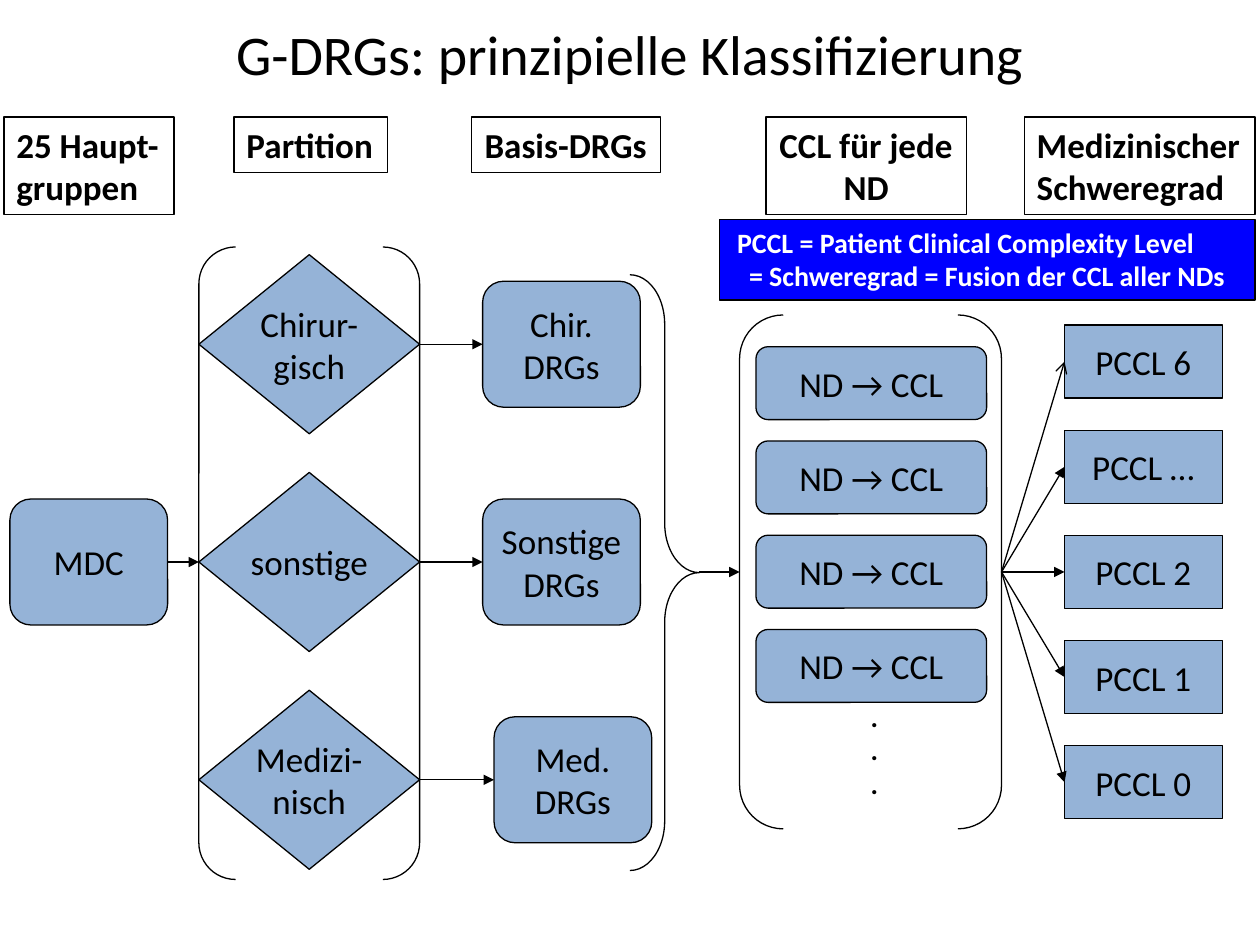
from lxml.etree import SubElement
from pptx import Presentation
from pptx.dml.color import RGBColor
from pptx.enum.shapes import MSO_CONNECTOR, MSO_SHAPE as SHAPE
from pptx.enum.text import MSO_ANCHOR as ANCHOR, PP_ALIGN as ALIGN
from pptx.oxml.ns import qn
from pptx.util import Cm, Pt

COLORS = {"box": "95B3D7", "banner": "0000FF", "ink": "000000", "light": "FFFFFF"}

TITLE = "G-DRGs: prinzipielle Klassifizierung"
HEADERS = [
    (["25 Haupt-", "gruppen"], 0.08, 3.43, ALIGN.LEFT),
    (["Partition"], 4.72, 3.1, ALIGN.LEFT),
    (["Basis-DRGs"], 9.5, 3.81, ALIGN.CENTER),
    (["CCL für jede", "ND"], 15.44, 4.04, ALIGN.CENTER),
    (["Medizinischer", "Schweregrad"], 20.65, 4.65, ALIGN.LEFT),
]
BANNER = ["PCCL = Patient Clinical Complexity Level",
          "= Schweregrad = Fusion der CCL aller NDs"]
BANNER_INDENTS = [0.11, 0.35]
PARTITIONS = [
    (["Chirur-", "gisch"], ["Chir.", "DRGs"], 9.73),
    (["sonstige"], ["Sonstige", "DRGs"], 9.73),
    (["Medizi-", "nisch"], ["Med.", "DRGs"], 9.96),
]
DIAGNOSES = ["ND → CCL"] * 4
LEVELS = ["PCCL 6", "PCCL …", "PCCL 2", "PCCL 1", "PCCL 0"]

BOX_W, BOX_H, SLIM_H = 3.18, 2.54, 1.47
MDC_X, PART_X, PART_W, PART_H = 0.2, 4.01, 4.45, 3.61
PART_MID, PART_STEP = 11.33, 4.39
ND_X, ND_Y, ND_W, ND_STEP = 15.24, 6.99, 4.65, 1.9
LEVEL_X, LEVEL_MID, LEVEL_STEP = 21.46, 11.53, 2.12
CCL_X, CCL_W, BRACE_X, BRACE_W = 14.91, 5.28, 12.7, 1.4

prs = Presentation()
prs.slide_width, prs.slide_height = Cm(25.4), Cm(19.05)
s = prs.slides.add_slide(prs.slide_layouts[5])


def color(name):
    return RGBColor.from_string(COLORS[name])


def write(tf, lines, size=20, bold=False, ink="ink", align=ALIGN.CENTER,
          anchor=ANCHOR.MIDDLE, wrap=False):
    tf.word_wrap = wrap
    tf.vertical_anchor = anchor
    for i, line in enumerate(lines):
        p = tf.paragraphs[0] if i == 0 else tf.add_paragraph()
        p.alignment = align
        r = p.add_run()
        r.text = line
        r.font.name, r.font.size, r.font.bold = "Calibri", Pt(size), bold
        r.font.color.rgb = color(ink)


def add_box(kind, x, y, w, h, lines=(), fill="box", **fmt):
    sp = s.shapes.add_shape(kind, Cm(x), Cm(y), Cm(w), Cm(h))
    sp.shadow.inherit = False
    if fill:
        sp.fill.solid()
        sp.fill.fore_color.rgb = color(fill)
    else:
        sp.fill.background()
    sp.line.color.rgb = color("ink")
    sp.line.width = Pt(0.75)
    write(sp.text_frame, lines, **fmt)
    return sp


def add_arrow(x1, y1, x2, y2, head="triangle"):
    c = s.shapes.add_connector(MSO_CONNECTOR.STRAIGHT, Cm(x1), Cm(y1), Cm(x2), Cm(y2))
    c.line.color.rgb = color("ink")
    c.line.width = Pt(0.75)
    SubElement(c.line._get_or_add_ln(), qn("a:tailEnd"), type=head)
    SubElement(c._element.spPr, qn("a:effectLst"))


title = s.shapes.title
title.left, title.top, title.width, title.height = Cm(1.27), Cm(0), Cm(22.86), Cm(2.13)
write(title.text_frame, [TITLE], size=32, wrap=True)

for lines, x, w, align in HEADERS:
    add_box(SHAPE.RECTANGLE, x, 2.36, w, 0.28 + 0.84 * len(lines), lines, fill=None,
            bold=True, align=align, anchor=ANCHOR.TOP)

add_box(SHAPE.ROUNDED_RECTANGLE, MDC_X, PART_MID - BOX_H / 2, BOX_W, BOX_H, ["MDC"])
add_arrow(MDC_X + BOX_W, PART_MID, PART_X, PART_MID)

for i, (partition, drgs, x) in enumerate(PARTITIONS):
    mid = PART_MID + (i - 1) * PART_STEP
    add_box(SHAPE.DIAMOND, PART_X, mid - PART_H / 2, PART_W, PART_H, partition)
    add_box(SHAPE.ROUNDED_RECTANGLE, x, mid - BOX_H / 2, BOX_W, BOX_H, drgs)
    add_arrow(PART_X + PART_W, mid, x, mid)

add_box(SHAPE.DOUBLE_BRACKET, PART_X, 4.98, PART_W, 12.75, fill=None)
brace = add_box(SHAPE.RIGHT_BRACE, BRACE_X, 5.54, BRACE_W, 12.01, fill=None)
brace.adjustments[0] = 0.713
add_arrow(BRACE_X + BRACE_W, LEVEL_MID, CCL_X, LEVEL_MID)

for i, text in enumerate(DIAGNOSES):
    add_box(SHAPE.ROUNDED_RECTANGLE, ND_X, ND_Y + i * ND_STEP, ND_W, SLIM_H, [text])
dots = s.shapes.add_textbox(Cm(17.3), Cm(13.97), Cm(0.66), Cm(2.31))
write(dots.text_frame, [".", ".", "."], size=16, bold=True, align=ALIGN.LEFT,
      anchor=ANCHOR.TOP)
add_box(SHAPE.DOUBLE_BRACKET, CCL_X, 6.35, CCL_W, 10.36, fill=None)

for i, text in enumerate(LEVELS):
    mid = LEVEL_MID + (i - 2) * LEVEL_STEP
    add_box(SHAPE.RECTANGLE, LEVEL_X, mid - SLIM_H / 2, BOX_W, SLIM_H, [text])
    add_arrow(CCL_X + CCL_W, LEVEL_MID, LEVEL_X, mid, "triangle" if i else "arrow")

banner = add_box(SHAPE.RECTANGLE, 14.5, 4.42, 10.8, 1.63, BANNER, fill="banner", size=16,
                 bold=True, ink="light", align=ALIGN.LEFT, anchor=ANCHOR.TOP, wrap=True)
for p, indent in zip(banner.text_frame.paragraphs, BANNER_INDENTS):
    p._p.get_or_add_pPr().set("marL", str(Cm(indent)))

prs.save("out.pptx")
